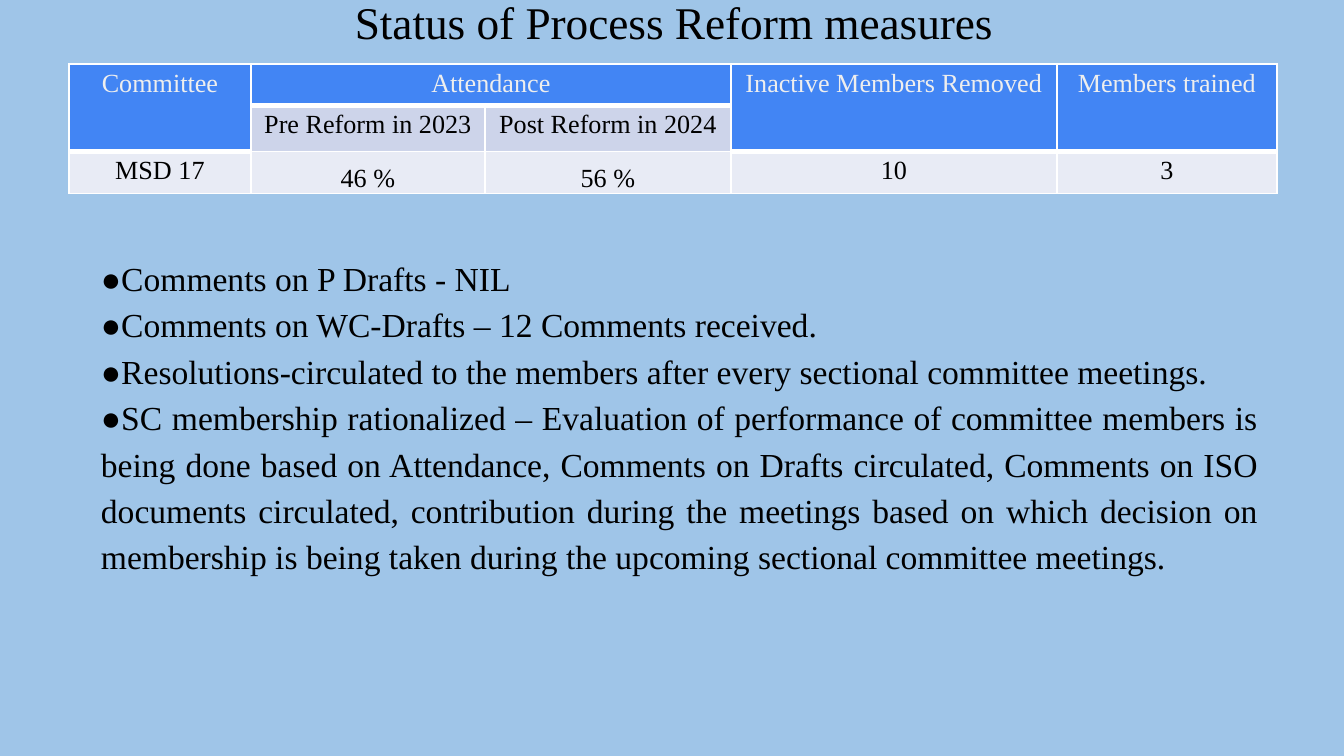
"""Build the slide on the status of process reform measures."""
import dataclasses
import itertools
import typing

import lxml.etree
import pptx
import pptx.dml.color
import pptx.enum.text
import pptx.oxml.ns
import pptx.util

Align = pptx.enum.text.PP_ALIGN
Anchor = pptx.enum.text.MSO_ANCHOR
Box = typing.Tuple[int, int, int, int]


@dataclasses.dataclass(frozen=True)
class Theme:
    font: str = "Times New Roman"
    back: str = "9FC5E8"
    ink: str = "000000"
    pale: str = "EEEEEE"
    head: str = "4285F4"
    sub: str = "CDD4EA"
    body: str = "E8EBF5"
    line: str = "FFFFFF"
    title: float = 24.3
    cell: float = 14
    text: float = 18
    thin: float = 1
    thick: float = 3


THEME = Theme()


@dataclasses.dataclass(frozen=True)
class Cell:
    row: int
    col: int
    text: str
    fill: str
    ink: str = THEME.ink
    rows: int = 1
    cols: int = 1
    top: float = THEME.thin
    low: float = THEME.thin
    rate: bool = False


def header(col: int, text: str, rows: int = 1, cols: int = 1) -> Cell:
    return Cell(0, col, text, THEME.head, THEME.pale, rows, cols, low=THEME.thick)


COLS = (182, 234, 246, 326, 220)
ROWS = (41, 46, 42)
CELLS = (
    header(0, "Committee", rows=2),
    header(1, "Attendance", cols=2),
    header(3, "Inactive Members Removed", rows=2),
    header(4, "Members trained", rows=2),
    Cell(1, 1, "Pre Reform in 2023", THEME.sub, top=THEME.thick),
    Cell(1, 2, "Post Reform in 2024", THEME.sub, top=THEME.thick),
    Cell(2, 0, "MSD 17", THEME.body, top=THEME.thick),
    Cell(2, 1, "46 %", THEME.body, rate=True),
    Cell(2, 2, "56 %", THEME.body, rate=True),
    Cell(2, 3, "10", THEME.body, top=THEME.thick),
    Cell(2, 4, "3", THEME.body, top=THEME.thick),
)
NOTES = (
    "Comments on P Drafts - NIL",
    "Comments on WC-Drafts – 12 Comments received.",
    "Resolutions-circulated to the members after every sectional committee meetings.",
    "SC membership rationalized – Evaluation of performance of committee members "
    "is being done based on Attendance, Comments on Drafts circulated, Comments on "
    "ISO documents circulated, contribution during the meetings based on which "
    "decision on membership is being taken during the upcoming sectional committee "
    "meetings.",
)


def px(num: int) -> pptx.util.Emu:
    return pptx.util.Emu(round(num * 914400 / 134.4))


def color(code: str) -> pptx.dml.color.RGBColor:
    return pptx.dml.color.RGBColor.from_string(code)


def inset(item: typing.Any, side: int, edge: int) -> None:
    item.margin_left = item.margin_right = px(side)
    item.margin_top = item.margin_bottom = px(edge)


def write(para: typing.Any, text: str, size: float, ink: str,
          align: Align, space: float = 1.0) -> None:
    para.alignment = align
    para.line_spacing = space
    run = para.add_run()
    run.text = text
    run.font.name = THEME.font
    run.font.size = pptx.util.Pt(size)
    run.font.bold = False
    run.font.color.rgb = color(ink)


def add_text(slide: typing.Any, box: Box, lines: typing.Sequence[str], size: float,
             align: Align, space: float, pad: typing.Tuple[int, int],
             anchor: Anchor, lead: float = 0) -> None:
    frame = slide.shapes.add_textbox(*map(px, box)).text_frame
    frame.word_wrap = True
    frame.vertical_anchor = anchor
    inset(frame, *pad)
    for num, text in enumerate(lines):
        para = frame.add_paragraph() if num else frame.paragraphs[0]
        write(para, text, size, THEME.ink, align, space)
    frame.paragraphs[0].space_before = pptx.util.Pt(lead)


def border(cell: typing.Any, top: float, low: float) -> None:
    name = pptx.oxml.ns.qn
    props = cell._tc.get_or_add_tcPr()
    sides = (("L", THEME.thin), ("R", THEME.thin), ("T", top), ("B", low))
    for side, width in sides:
        line = lxml.etree.SubElement(props, name(f"a:ln{side}"))
        line.set("w", str(pptx.util.Pt(width)))
        fill = lxml.etree.SubElement(line, name("a:solidFill"))
        lxml.etree.SubElement(fill, name("a:srgbClr")).set("val", THEME.line)


def add_cell(table: typing.Any, spec: Cell) -> None:
    last = (spec.row + spec.rows - 1, spec.col + spec.cols - 1)
    area = itertools.product(range(spec.row, last[0] + 1), range(spec.col, last[1] + 1))
    for row, col in area:
        part = table.cell(row, col)
        border(part, spec.top, spec.low)
        part.fill.solid()
        part.fill.fore_color.rgb = color(spec.fill)
    cell = table.cell(spec.row, spec.col)
    if spec.rows * spec.cols > 1:
        cell.merge(table.cell(*last))
    inset(cell, *((8, 0) if spec.rate else (11, 5)))
    cell.vertical_anchor = Anchor.BOTTOM if spec.rate else Anchor.TOP
    write(cell.text_frame.paragraphs[0], spec.text, THEME.cell, spec.ink,
          Align.CENTER, 1.15 if spec.rate else 1.0)


def add_grid(slide: typing.Any, left: int, top: int) -> None:
    box = (left, top, sum(COLS), sum(ROWS))
    table = slide.shapes.add_table(len(ROWS), len(COLS), *map(px, box)).table
    table.first_row = table.horz_banding = False
    for col, width in zip(table.columns, COLS):
        col.width = px(width)
    for row, height in zip(table.rows, ROWS):
        row.height = px(height)
    for cell in CELLS:
        add_cell(table, cell)


def main() -> None:
    deck = pptx.Presentation()
    deck.slide_width, deck.slide_height = px(1344), px(756)
    slide = deck.slides.add_slide(deck.slide_layouts[6])
    slide.background.fill.solid()
    slide.background.fill.fore_color.rgb = color(THEME.back)
    add_text(slide, (70, 0, 1208, 50), ["Status of Process Reform measures"],
             THEME.title, Align.CENTER, 0.9, (9, 5), Anchor.MIDDLE)
    add_grid(slide, 69, 64)
    add_text(slide, (87, 238, 1186, 419), [f"●{note}" for note in NOTES],
             THEME.text, Align.JUSTIFY, 1.15, (14, 14), Anchor.TOP, lead=10)
    deck.save("out.pptx")


if __name__ == "__main__":
    main()
